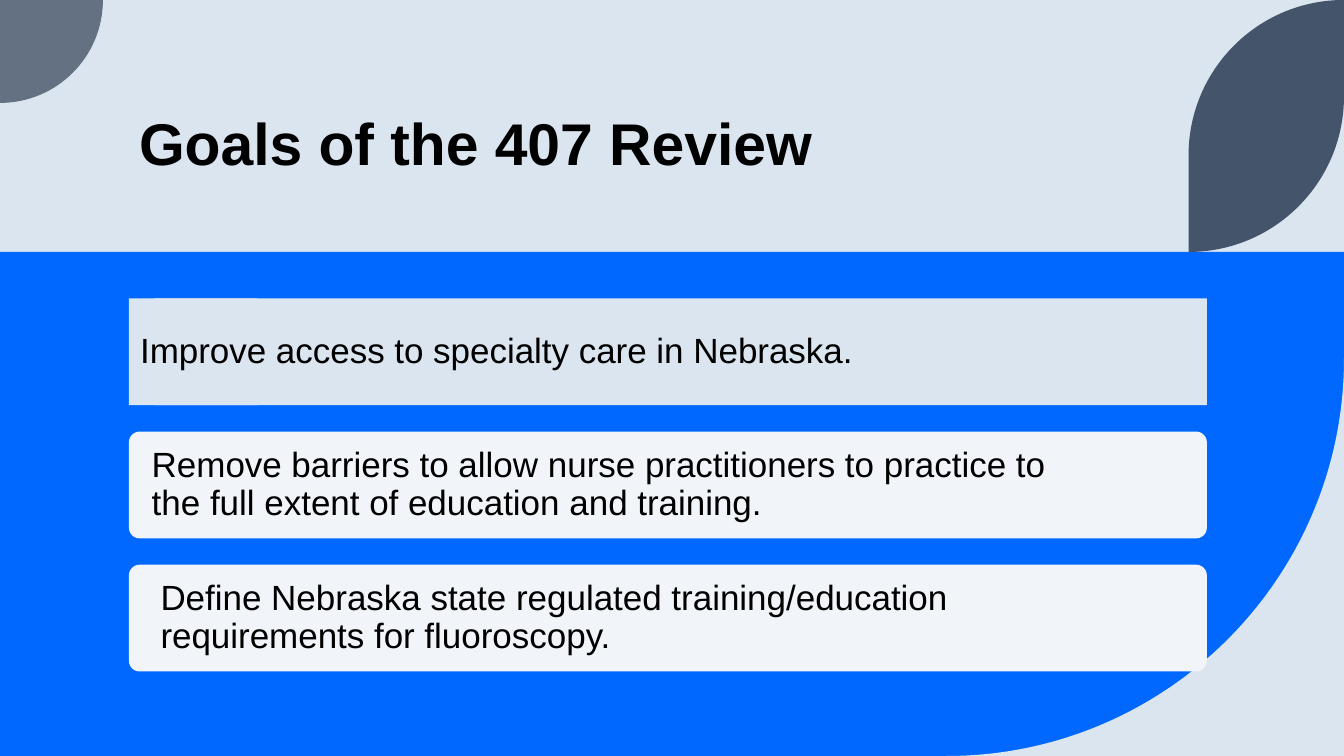
from dataclasses import dataclass

from lxml import etree
from pptx import Presentation
from pptx.dml.color import RGBColor
from pptx.enum import shapes as sh, text as tx
from pptx.oxml.ns import qn
from pptx.util import Pt


@dataclass(frozen=True)
class Theme:
    pale: str = "DAE5EF"
    blue: str = "0068FF"
    gray: str = "637183"
    navy: str = "44546A"
    card: str = "F1F5F9"
    ink: str = "000000"
    font: str = "Arial"
    head: float = 42
    body: float = 25


THEME = Theme()
WIDE, HIGH = 960, 540
BAND = 180  # height of the pale header
ROUND = 0.5523  # handle length of a quarter circle
LEAD = "Improve access to specialty care in Nebraska."
GOALS = [  # wording, text indent from the card's left edge
    ("Remove barriers to allow nurse practitioners to practice to "
     "the full extent of education and training.", 8.3),
    ("Define Nebraska state regulated training/education "
     "requirements for fluoroscopy.", 14.6),
]


def paint(shape, color):
    shape.shadow.inherit = False
    shape.fill.solid()
    shape.fill.fore_color.rgb = RGBColor.from_string(color)
    shape.line.fill.background()


def block(slide, kind, box, color):
    shape = slide.shapes.add_shape(kind, *map(Pt, box))
    paint(shape, color)
    return shape


def outline(slide, dots, bends, color):
    """Closed outline; bends maps a dot's index to the corner its arc rounds."""
    spots = [(Pt(x), Pt(y)) for x, y in dots]
    build = slide.shapes.build_freeform(*spots[0])
    build.add_line_segments(spots[1:], close=True)
    shape = build.convert_to_shape()
    paint(shape, color)
    lines = list(shape.element.iter(qn("a:lnTo")))
    for i, corner in bends.items():
        line = lines[i - 1]
        line.tag = qn("a:cubicBezTo")
        for n, end in enumerate((dots[i - 1], dots[i])):
            x, y = (Pt(e + ROUND * (c - e)) for e, c in zip(end, corner))
            grip = etree.Element(qn("a:pt"), x=str(x - shape.left),
                                 y=str(y - shape.top))
            line.insert(n, grip)


def write(shape, words, size, pad, anchor, space, bold=False):
    frame = shape.text_frame
    frame.text = words
    frame.word_wrap = True
    frame.vertical_anchor = anchor
    frame.margin_left = frame.margin_right = Pt(pad[0])
    frame.margin_top = frame.margin_bottom = Pt(pad[1])
    para = frame.paragraphs[0]
    para.alignment = tx.PP_ALIGN.LEFT
    para.line_spacing = space
    font = para.runs[0].font
    font.name, font.size, font.bold = THEME.font, Pt(size), bold
    font.color.rgb = RGBColor.from_string(THEME.ink)


def decor(slide, box):
    left, top, width, height = box
    right, base = left + width, top + height
    edge = top + BAND
    block(slide, sh.MSO_SHAPE.RECTANGLE,
          (left, edge, width, base - edge), THEME.blue)
    # Cut-away bottom right corner
    big = 284
    end = (right, base)
    outline(slide, [(right, base - big), (right - big, base), end],
            {1: end}, THEME.pale)
    # Quarter disc at top left
    disc = 73.5
    outline(slide, [(left, top), (left + disc, top), (left, top + disc)],
            {2: (left + disc, top + disc)}, THEME.gray)
    # Leaf at top right
    leaf = 111
    stem = right - leaf
    outline(slide, [(right, top), (right, edge - leaf), (stem, edge),
                    (stem, top + leaf), (right, top)],
            {2: (right, edge), 4: (stem, top)}, THEME.navy)


def title(slide, box, words):
    shape = slide.shapes.add_textbox(*map(Pt, box))
    write(shape, words, THEME.head, (7.2, 3.6), tx.MSO_ANCHOR.BOTTOM, 0.8, True)


def goals(slide, box, lead, items):
    left, top, width, height = box
    gap = 18.8
    tall = (height - gap * len(items)) / (len(items) + 1)
    style = (THEME.body, (8, 8), tx.MSO_ANCHOR.MIDDLE, 0.9)
    # Rounded cards with a label on each
    for row, (words, shift) in enumerate(items, 1):
        y = top + row * (tall + gap)
        card = block(slide, sh.MSO_SHAPE.ROUNDED_RECTANGLE,
                     (left, y, width, tall), THEME.card)
        card.adjustments[0] = 0.1
        label = slide.shapes.add_textbox(
            *map(Pt, (left + shift, y, 681, tall)))
        write(label, words, *style)
    # Square lead card with its icon tile
    for x, wide in ((left + 18, 74), (left, width)):
        card = block(slide, sh.MSO_SHAPE.RECTANGLE, (x, top, wide, tall),
                     THEME.pale)
    write(card, lead, *style)


def main():
    deck = Presentation()
    deck.slide_width, deck.slide_height = Pt(WIDE), Pt(HIGH)
    slide = deck.slides.add_slide(deck.slide_layouts[6])
    back = slide.background.fill
    back.solid()
    back.fore_color.rgb = RGBColor.from_string(THEME.pale)
    decor(slide, (0, 0, WIDE, HIGH))
    title(slide, (92.2, 3.6, 769.7, 126), "Goals of the 407 Review")
    goals(slide, (92.1, 213.2, 770, 266.4), LEAD, GOALS)
    deck.save("out.pptx")


if __name__ == "__main__":
    main()
